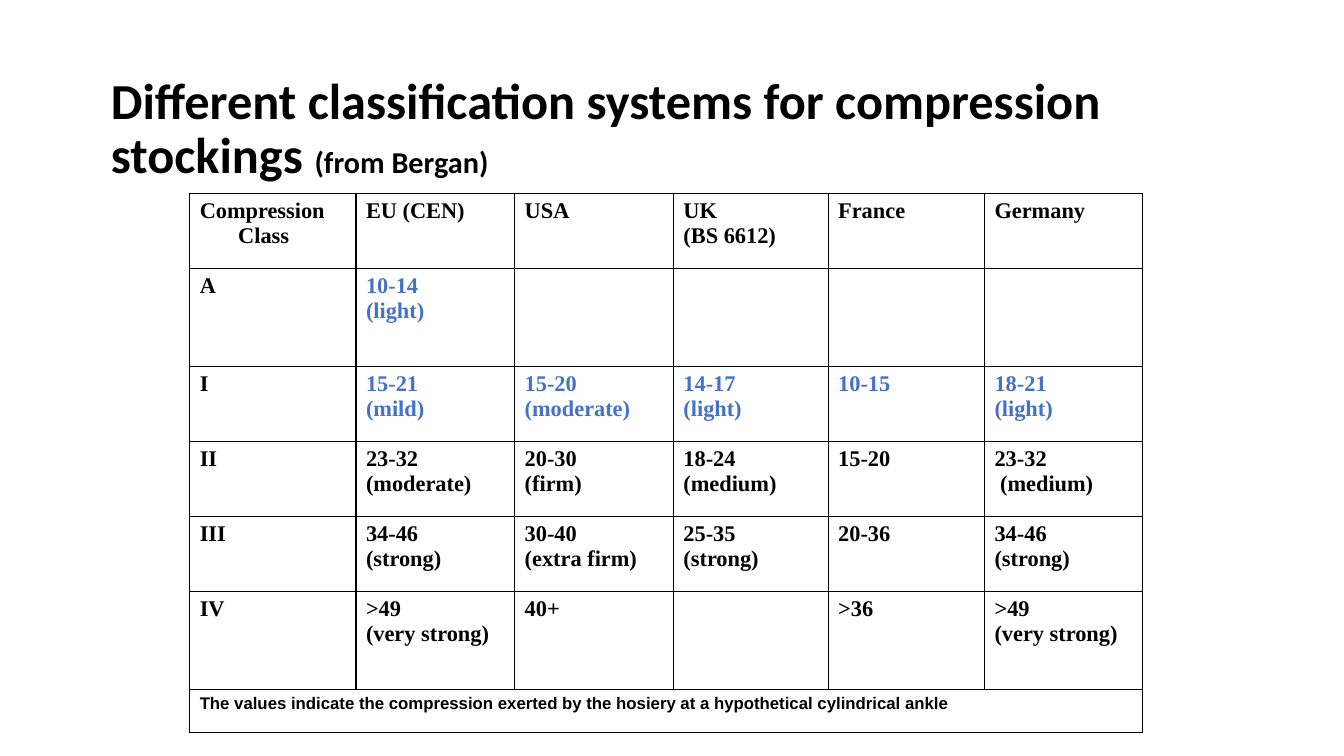
from lxml import etree
from pptx import Presentation
from pptx.dml.color import RGBColor
from pptx.enum.text import MSO_ANCHOR, PP_ALIGN
from pptx.oxml.ns import qn
from pptx.util import Cm, Pt

LEFT = PP_ALIGN.LEFT
MIDDLE = MSO_ANCHOR.MIDDLE
BLACK, BLUE = "000000", "4472C4"
COL_WIDTHS = [4.19, 4, 4, 3.9, 3.94, 3.98]
ROW_HEIGHTS = [1.89, 2.46, 1.89, 1.89, 1.89, 2.47, 1.09]
ROWS = [
    ["Compression Class", "EU (CEN)", "USA", "UK\n(BS 6612)", "France", "Germany"],
    ["A", "10-14\n(light)", "", "", "", ""],
    ["I", "15-21\n(mild)", "15-20\n(moderate)", "14-17\n(light)", "10-15", "18-21\n(light)"],
    ["II", "23-32\n(moderate)", "20-30\n(firm)", "18-24\n(medium)", "15-20", "23-32\n (medium)"],
    ["III", "34-46\n(strong)", "30-40\n(extra firm)", "25-35\n(strong)", "20-36", "34-46\n(strong)"],
    ["IV", ">49\n(very strong)", "40+", "", ">36", ">49\n(very strong)"],
]
BLUE_ROWS = (1, 2)
FOOTNOTE = ("The values indicate the compression exerted by the hosiery "
            "at a hypothetical cylindrical ankle")


def rgb(color):
    return RGBColor.from_string(color)


def set_font(font, name, size, color=BLACK):
    font.name, font.size, font.bold = name, Pt(size), True
    font.color.rgb = rgb(color)


def add_title(slide):
    sp = slide.shapes.title
    sp.left, sp.top, sp.width, sp.height = Cm(2.54), Cm(1.69), Cm(28.79), Cm(3.18)
    tf = sp.text_frame
    tf.word_wrap = True
    tf.vertical_anchor = MIDDLE
    p = tf.paragraphs[0]
    p.alignment, p.line_spacing = LEFT, 0.9
    for text, size in (("Different classification systems for compression stockings ", 36),
                       ("(from Bergan)", 21.6)):
        r = p.add_run()
        r.text = text
        set_font(r.font, "Calibri", size)


def set_borders(cell):
    tc_pr = cell._tc.get_or_add_tcPr()
    for i, side in enumerate(("lnL", "lnR", "lnT", "lnB")):
        ln = etree.Element(qn("a:" + side), w=str(Pt(1)))
        fill = etree.SubElement(ln, qn("a:solidFill"))
        etree.SubElement(fill, qn("a:srgbClr"), val=BLACK)
        tc_pr.insert(i, ln)


def fill_cell(cell, text, name="Times New Roman", size=16, color=BLACK):
    """Write one hanging-indent paragraph per line of text."""
    cell.text = text
    for p in cell.text_frame.paragraphs:
        set_font(p.font, name, size, color)
        p_pr = p._p.get_or_add_pPr()
        p_pr.set("marL", str(Cm(0.97)))
        p_pr.set("indent", str(-Cm(0.97)))


def add_class_table(slide):
    frame = slide.shapes.add_table(
        len(ROW_HEIGHTS), len(COL_WIDTHS), Cm(4.78), Cm(4.88),
        Cm(sum(COL_WIDTHS)), Cm(sum(ROW_HEIGHTS)))
    table = frame.table
    table.first_row = table.horz_banding = False
    for col, width in zip(table.columns, COL_WIDTHS):
        col.width = Cm(width)
    for row, height in zip(table.rows, ROW_HEIGHTS):
        row.height = Cm(height)
    for cell in table.iter_cells():
        cell.fill.background()
        set_borders(cell)
    for i, row in enumerate(ROWS):
        for j, text in enumerate(row):
            color = BLUE if i in BLUE_ROWS and j > 0 else BLACK
            fill_cell(table.cell(i, j), text, color=color)
    last = len(ROWS)
    note = table.cell(last, 0)
    note.merge(table.cell(last, len(COL_WIDTHS) - 1))
    fill_cell(note, FOOTNOTE, "Arial", 12)


def main():
    prs = Presentation()
    prs.slide_width, prs.slide_height = Cm(33.87), Cm(19.05)
    slide = prs.slides.add_slide(prs.slide_layouts[5])
    add_title(slide)
    add_class_table(slide)
    prs.save("out.pptx")


if __name__ == "__main__":
    main()
